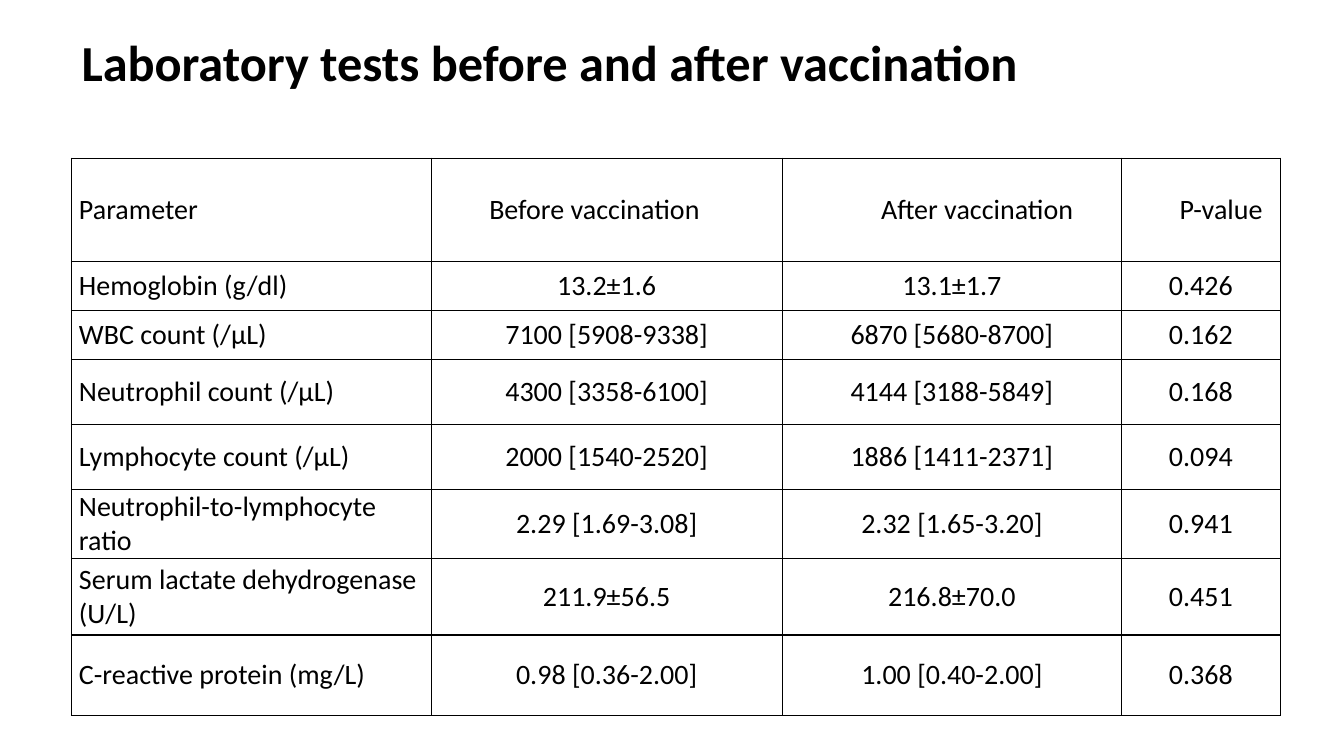
from lxml.etree import SubElement
from pptx import Presentation
from pptx.dml.color import RGBColor
from pptx.enum.text import MSO_ANCHOR as Anchor, MSO_AUTO_SIZE as AutoSize, PP_ALIGN as Align
from pptx.oxml.ns import qn
from pptx.util import Cm, Pt

BLACK = RGBColor(0, 0, 0)
FONT = "Calibri"
LEFT = Cm(1.8)
COLUMN_WIDTHS = [9.07, 8.84, 8.56, 3.99]
ROW_HEIGHTS = [2.6, 1.24, 1.22, 1.65, 1.64, 1.72, 1.93, 2.03]
HEADER_INDENT = Cm(1.27)

LABORATORY_TESTS = [
    ("Parameter", "Before vaccination", "After vaccination", "P-value"),
    ("Hemoglobin (g/dl)", "13.2±1.6", "13.1±1.7", "0.426"),
    ("WBC count (/μL)", "7100 [5908-9338]", "6870 [5680-8700]", "0.162"),
    ("Neutrophil count (/μL)", "4300 [3358-6100]", "4144 [3188-5849]", "0.168"),
    ("Lymphocyte count (/μL)", "2000 [1540-2520]", "1886 [1411-2371]", "0.094"),
    ("Neutrophil-to-lymphocyte ratio", "2.29 [1.69-3.08]", "2.32 [1.65-3.20]", "0.941"),
    ("Serum lactate dehydrogenase (U/L)", "211.9±56.5", "216.8±70.0", "0.451"),
    ("C-reactive protein (mg/L)", "0.98 [0.36-2.00]", "1.00 [0.40-2.00]", "0.368"),
]
HEADER_ALIGNMENTS = [Align.LEFT, Align.LEFT, Align.CENTER, Align.LEFT]
BODY_ALIGNMENTS = [Align.LEFT, Align.CENTER, Align.CENTER, Align.CENTER]


def format_paragraph(paragraph, size, alignment, bold=False):
    paragraph.alignment = alignment
    paragraph.font.name = FONT
    paragraph.font.size = Pt(size)
    paragraph.font.bold = bold
    paragraph.font.color.rgb = BLACK


def add_title(slide, text):
    title = slide.shapes.title
    title.left, title.top, title.width, title.height = LEFT, Cm(0.64), Cm(30.1), Cm(1.8)
    frame = title.text_frame
    frame.text = text
    frame.auto_size = AutoSize.NONE
    frame.vertical_anchor = Anchor.MIDDLE
    format_paragraph(frame.paragraphs[0], 36, Align.LEFT, bold=True)


def set_borders(cell):
    properties = cell._tc.get_or_add_tcPr()
    for side in ("a:lnL", "a:lnR", "a:lnT", "a:lnB"):
        line = SubElement(properties, qn(side), w=str(Pt(1)))
        fill = SubElement(line, qn("a:solidFill"))
        SubElement(fill, qn("a:srgbClr"), val=str(BLACK))


def fill_cell(cell, text, alignment, indent):
    cell.text = text
    cell.vertical_anchor = Anchor.MIDDLE
    cell.margin_left = cell.margin_right = Cm(0.19)
    cell.margin_top = cell.margin_bottom = 0
    set_borders(cell)
    cell.fill.background()
    paragraph = cell.text_frame.paragraphs[0]
    format_paragraph(paragraph, 20, alignment)
    if indent:
        paragraph._p.get_or_add_pPr().set("marL", str(indent))


def add_tests_table(slide):
    table = slide.shapes.add_table(
        len(ROW_HEIGHTS), len(COLUMN_WIDTHS), LEFT, Cm(3.99),
        Cm(sum(COLUMN_WIDTHS)), Cm(sum(ROW_HEIGHTS))).table
    table.first_row = table.horz_banding = False
    for column, width in zip(table.columns, COLUMN_WIDTHS):
        column.width = Cm(width)
    for row, height in zip(table.rows, ROW_HEIGHTS):
        row.height = Cm(height)

    for row_index, values in enumerate(LABORATORY_TESTS):
        is_header = row_index == 0
        alignments = HEADER_ALIGNMENTS if is_header else BODY_ALIGNMENTS
        for column_index, text in enumerate(values):
            indent = HEADER_INDENT if is_header and column_index else 0
            fill_cell(table.cell(row_index, column_index), text,
                      alignments[column_index], indent)


def main():
    presentation = Presentation()
    presentation.slide_width, presentation.slide_height = Cm(33.87), Cm(19.05)
    slide = presentation.slides.add_slide(presentation.slide_layouts[5])

    # Heading
    add_title(slide, "Laboratory tests before and after vaccination")
    # Test results
    add_tests_table(slide)

    presentation.save("out.pptx")


if __name__ == "__main__":
    main()
